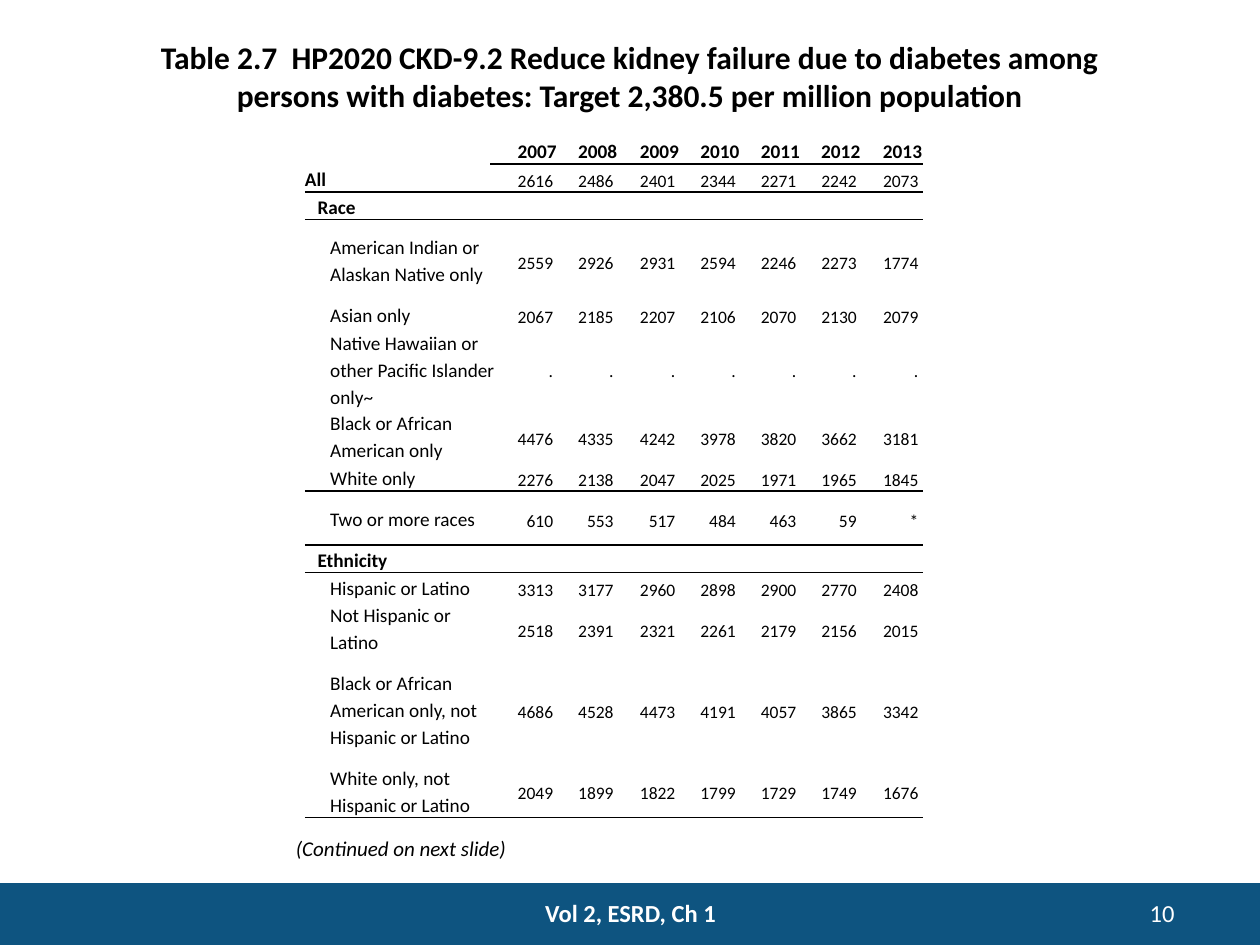
from lxml import etree
from pptx import Presentation
from pptx.dml.color import RGBColor
from pptx.enum import shapes, text
from pptx.oxml import ns
from pptx.util import Inches, Pt

BLACK = RGBColor(0x00, 0x00, 0x00)
WHITE = RGBColor(0xFF, 0xFF, 0xFF)
BLUE = RGBColor(0x0E, 0x54, 0x80)
FONT = "Calibri"
NO_STYLE = "{2D5ABB26-0587-4C30-8999-92F81FD0307C}"

TITLE = ("Table 2.7  HP2020 CKD-9.2 Reduce kidney failure due to diabetes among\v"
         "persons with diabetes: Target 2,380.5 per million population")
YEARS = ["2007", "2008", "2009", "2010", "2011", "2012", "2013"]
# label, indent level, row height, values by year
ROWS = [
    ("All", 0, 0.22, "2616 2486 2401 2344 2271 2242 2073"),
    ("Race", 1, 0.22, ""),
    ("American Indian or Alaskan Native only", 2, 0.64, "2559 2926 2931 2594 2246 2273 1774"),
    ("Asian only", 2, 0.22, "2067 2185 2207 2106 2070 2130 2079"),
    ("Native Hawaiian or other Pacific Islander only~", 2, 0.64, ". . . . . . ."),
    ("Black or African American only", 2, 0.43, "4476 4335 4242 3978 3820 3662 3181"),
    ("White only", 2, 0.22, "2276 2138 2047 2025 1971 1965 1845"),
    ("Two or more races", 2, 0.43, "610 553 517 484 463 59 *"),
    ("Ethnicity", 1, 0.22, ""),
    ("Hispanic or Latino", 2, 0.22, "3313 3177 2960 2898 2900 2770 2408"),
    ("Not Hispanic or Latino", 2, 0.43, "2518 2391 2321 2261 2179 2156 2015"),
    ("Black or African American only, not Hispanic or Latino", 2, 0.86,
     "4686 4528 4473 4191 4057 3865 3342"),
    ("White only, not Hispanic or Latino", 2, 0.43, "2049 1899 1822 1799 1729 1749 1676"),
]
HEADER_HEIGHT = 0.38
COLUMNS = [1.47, 0.05, 0.48, 0.48, 0.49, 0.48, 0.48, 0.48, 0.49]
FIRST_YEAR = 2  # column of the first year
RULED_ROWS = {0, 1, 7, 8, 13}  # rows with a line below


def style_runs(para, size, color=BLACK, bold=False, italic=False):
    for span in para.runs:
        font = span.font
        font.name, font.size, font.bold, font.italic = FONT, Pt(size), bold, italic
        font.color.rgb = color


def add_label(page, wording, place, size, align, color=BLACK, bold=False, italic=False):
    box = page.shapes.add_textbox(*map(Inches, place))
    box.text_frame.word_wrap = True
    para = box.text_frame.paragraphs[0]
    para.text, para.alignment = wording, align
    style_runs(para, size, color, bold, italic)


def fill_cell(cell, wording, size, bold=False, align=text.PP_ALIGN.RIGHT,
              indent=0, after=0, insets=(0, 0, 0, 0)):
    cell.margin_left, cell.margin_top, cell.margin_right, cell.margin_bottom = map(Inches, insets)
    cell.vertical_anchor = text.MSO_ANCHOR.MIDDLE
    para = cell.text_frame.paragraphs[0]
    para.text, para.alignment, para.line_spacing = wording, align, 1.15
    if after:
        para.space_after = Pt(after)
    if indent:
        para._p.get_or_add_pPr().set("marL", str(Inches(indent)))
    style_runs(para, size, bold=bold)
    if not wording:
        etree.SubElement(para._p, ns.qn("a:endParaRPr"), sz=str(size * 100))


def add_rule(cell, side):
    """Draw a thin black line on one side of a cell: "lnT" or "lnB"."""
    line = etree.SubElement(cell._tc.get_or_add_tcPr(), ns.qn("a:" + side), w=str(Pt(1)))
    fill = etree.SubElement(line, ns.qn("a:solidFill"))
    etree.SubElement(fill, ns.qn("a:srgbClr"), val=str(BLACK))


def add_rates_table(page):
    heights = [HEADER_HEIGHT] + [row[2] for row in ROWS]
    frame = page.shapes.add_table(len(heights), len(COLUMNS), Inches(2.42), Inches(0.92),
                                  Inches(sum(COLUMNS)), Inches(sum(heights)))
    table = frame.table
    table.first_row = table.horz_banding = False
    table._tbl.tblPr.find(ns.qn("a:tableStyleId")).text = NO_STYLE
    for column, width in zip(table.columns, COLUMNS):
        column.width = Inches(width)
    for row, height in zip(table.rows, heights):
        row.height = Inches(height)

    for c, wording in enumerate([""] * FIRST_YEAR + YEARS):
        cell = table.cell(0, c)
        fill_cell(cell, wording, 11, bold=True, insets=(0.01, 0, 0.01, 0))
        cell.vertical_anchor = text.MSO_ANCHOR.BOTTOM
    for r, (label, level, _, values) in enumerate(ROWS, start=1):
        fill_cell(table.cell(r, 0), label, 11, bold=level < 2,
                  align=text.PP_ALIGN.LEFT, indent=level / 10)
        table.cell(r, 0).merge(table.cell(r, 1))
        for c, value in enumerate(values.split() or [""] * len(YEARS), start=FIRST_YEAR):
            fill_cell(table.cell(r, c), value, 10, after=10 if value else 0,
                      insets=(0.01, 0.03, 0.04, 0) if value else (0, 0, 0, 0))

    for r in range(len(heights)):
        for c in range(len(COLUMNS)):
            cell = table.cell(r, c)
            if r - 1 in RULED_ROWS and (r > 1 or c >= FIRST_YEAR):
                add_rule(cell, "lnT")
            if r in RULED_ROWS and (r > 0 or c > 0):
                add_rule(cell, "lnB")
            cell.fill.background()


def main():
    deck = Presentation()
    deck.slide_width, deck.slide_height = Inches(10), Inches(7.5)
    page = deck.slides.add_slide(deck.slide_layouts[5])

    band = page.shapes.add_shape(shapes.MSO_SHAPE.RECTANGLE, *map(Inches, (0, 7.01, 10, 0.49)))
    band.shadow.inherit = False
    band.fill.solid()
    band.fill.fore_color.rgb = BLUE
    band.line.fill.background()
    add_label(page, "10", (8.42, 7.08, 1, 0.3), 14, text.PP_ALIGN.RIGHT, WHITE)
    add_label(page, "Vol 2, ESRD, Ch 1", (3.92, 7.08, 2.17, 0.33), 14,
              text.PP_ALIGN.CENTER, WHITE, bold=True)

    title = page.shapes.title
    title.left, title.top, title.width, title.height = map(Inches, (0.5, 0.25, 9, 0.71))
    title.text_frame.text = TITLE
    title.text_frame.vertical_anchor = text.MSO_ANCHOR.MIDDLE
    title.text_frame.paragraphs[0].alignment = text.PP_ALIGN.CENTER
    style_runs(title.text_frame.paragraphs[0], 18, bold=True)

    add_label(page, "(Continued on next slide)", (2.25, 6.58, 2.75, 0.3), 12,
              text.PP_ALIGN.LEFT, italic=True)
    add_rates_table(page)
    deck.save("out.pptx")


if __name__ == "__main__":
    main()
